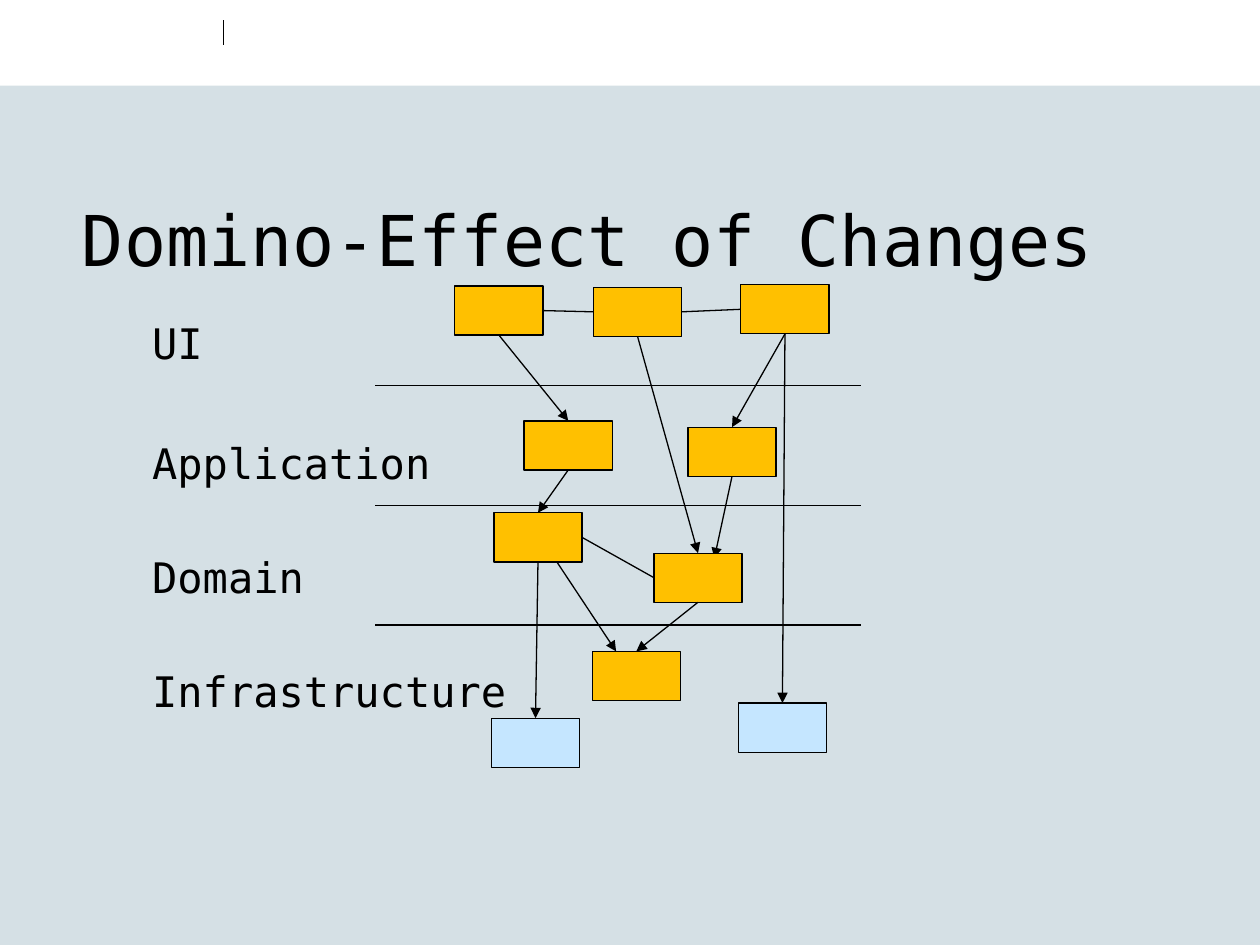
import pptx
import pptx.util
import pptx.dml.color
import pptx.enum.shapes
import pptx.enum.text
import pptx.oxml

WIDTH, HEIGHT = 10, 7.5
FONT = "DejaVu Sans Mono"
BLACK, WHITE, ORANGE, BLUE, GREY = "000000", "FFFFFF", "FFC000", "C5E6FF", "D5E0E5"
TOP, LEFT, BOTTOM, RIGHT = range(4)

TITLE = "Domino-Effect of Changes"
LAYERS = [("UI", 2.4), ("Application", 3.35), ("Domain", 4.26), ("Infrastructure", 5.16)]
RULE_LEFT, RULE_RIGHT, RULE_TOP, RULE_STEP = 2.98, 6.83, 3.06, 0.95

BOX_W, BOX_H = 0.7, 0.39
BOXES = {
    "ui left": (3.61, 2.27, ORANGE),
    "ui middle": (4.71, 2.28, ORANGE),
    "ui right": (5.88, 2.26, ORANGE),
    "app left": (4.16, 3.34, ORANGE),
    "app right": (5.46, 3.39, ORANGE),
    "domain left": (3.92, 4.07, ORANGE),
    "domain right": (5.19, 4.39, ORANGE),
    "infra middle": (4.7, 5.17, ORANGE),
    "infra right": (5.86, 5.58, BLUE),
    "infra left": (3.9, 5.7, BLUE),
}
FREE_ARROWS = [(5.81, 3.78, 5.67, 4.43), (4.42, 4.46, 4.89, 5.17)]
CALLS = [
    ("ui middle", "domain right"),
    ("ui left", "app left"),
    ("ui right", "app right"),
    ("ui right", "infra right"),
    ("domain left", "infra left"),
    ("domain right", "infra middle"),
    ("app left", "domain left"),
]
PEERS = [
    ("ui left", "ui middle"),
    ("ui middle", "ui right"),
    ("domain left", "domain right"),
]

prs = pptx.Presentation()
prs.slide_width = pptx.util.Inches(WIDTH)
prs.slide_height = pptx.util.Inches(HEIGHT)
s = prs.slides.add_slide(prs.slide_layouts[5])


def inches(*values):
    return [pptx.util.Inches(v) for v in values]


def paint(fill, color):
    fill.solid()
    fill.fore_color.rgb = pptx.dml.color.RGBColor.from_string(color)


def add_box(x, y, w, h, color, outlined=True):
    sp = s.shapes.add_shape(pptx.enum.shapes.MSO_SHAPE.RECTANGLE, *inches(x, y, w, h))
    sp.shadow.inherit = False
    paint(sp.fill, color)
    if outlined:
        paint(sp.line.fill, BLACK)
        sp.line.width = pptx.util.Pt(0.75)
    else:
        sp.line.fill.background()
    return sp


def add_line(x1, y1, x2, y2, arrow=False, width=0.75):
    ln = s.shapes.add_connector(
        pptx.enum.shapes.MSO_CONNECTOR.STRAIGHT, *inches(x1, y1, x2, y2))
    paint(ln.line.fill, BLACK)
    ln.line.width = pptx.util.Pt(width)
    props = ln._element.spPr
    if arrow:
        tail = pptx.oxml.parse_xml(
            '<a:tailEnd xmlns:a="http://schemas.openxmlformats.org/drawingml/2006/main"'
            ' type="triangle"/>')
        ln.line._get_or_add_ln().append(tail)
    props.append(pptx.oxml.parse_xml(
        '<a:effectLst xmlns:a="http://schemas.openxmlformats.org/drawingml/2006/main"/>'))
    return ln


def join(start, start_side, end, end_side, arrow):
    ln = add_line(0, 0, 1, 1, arrow)
    ln.begin_connect(boxes[start], start_side)
    ln.end_connect(boxes[end], end_side)


def write(sp, text, size, align, inset_top):
    tf = sp.text_frame
    frame = {
        "word_wrap": True,
        "auto_size": pptx.enum.text.MSO_AUTO_SIZE.NONE,
        "vertical_anchor": pptx.enum.text.MSO_ANCHOR.TOP,
        "margin_left": pptx.util.Inches(0.1),
        "margin_right": pptx.util.Inches(0.1),
        "margin_top": pptx.util.Inches(inset_top),
        "margin_bottom": pptx.util.Inches(0.1),
    }
    for name, value in frame.items():
        setattr(tf, name, value)
    p = tf.paragraphs[0]
    p.alignment = align
    r = p.add_run()
    r.text = text
    for name, value in {"name": FONT, "size": pptx.util.Pt(size)}.items():
        setattr(r.font, name, value)
    paint(r.font.fill, BLACK)


paint(s.background.fill, GREY)
add_box(0, 0, WIDTH, 0.68, WHITE, outlined=False)
add_line(1.77, 0.16, 1.77, 0.36, width=0.5)

title = s.shapes.title
title.left, title.top, title.width, title.height = inches(0, 1.42, 9.32, 0.63)
write(title, TITLE, 40, pptx.enum.text.PP_ALIGN.CENTER, 0.14)

for i in range(len(LAYERS) - 1):
    y = RULE_TOP + i * RULE_STEP
    add_line(RULE_LEFT, y, RULE_RIGHT, y)

for label, y in LAYERS:
    sp = s.shapes.add_textbox(*inches(1.11, y, 3.66, 0.48))
    write(sp, label, 24, pptx.enum.text.PP_ALIGN.LEFT, 0.12)

for ends in FREE_ARROWS:
    add_line(*ends, arrow=True)

boxes = {name: add_box(x, y, BOX_W, BOX_H, color) for name, (x, y, color) in BOXES.items()}
for start, end in CALLS:
    join(start, BOTTOM, end, TOP, True)
for start, end in PEERS:
    join(start, RIGHT, end, LEFT, False)

prs.save("out.pptx")
